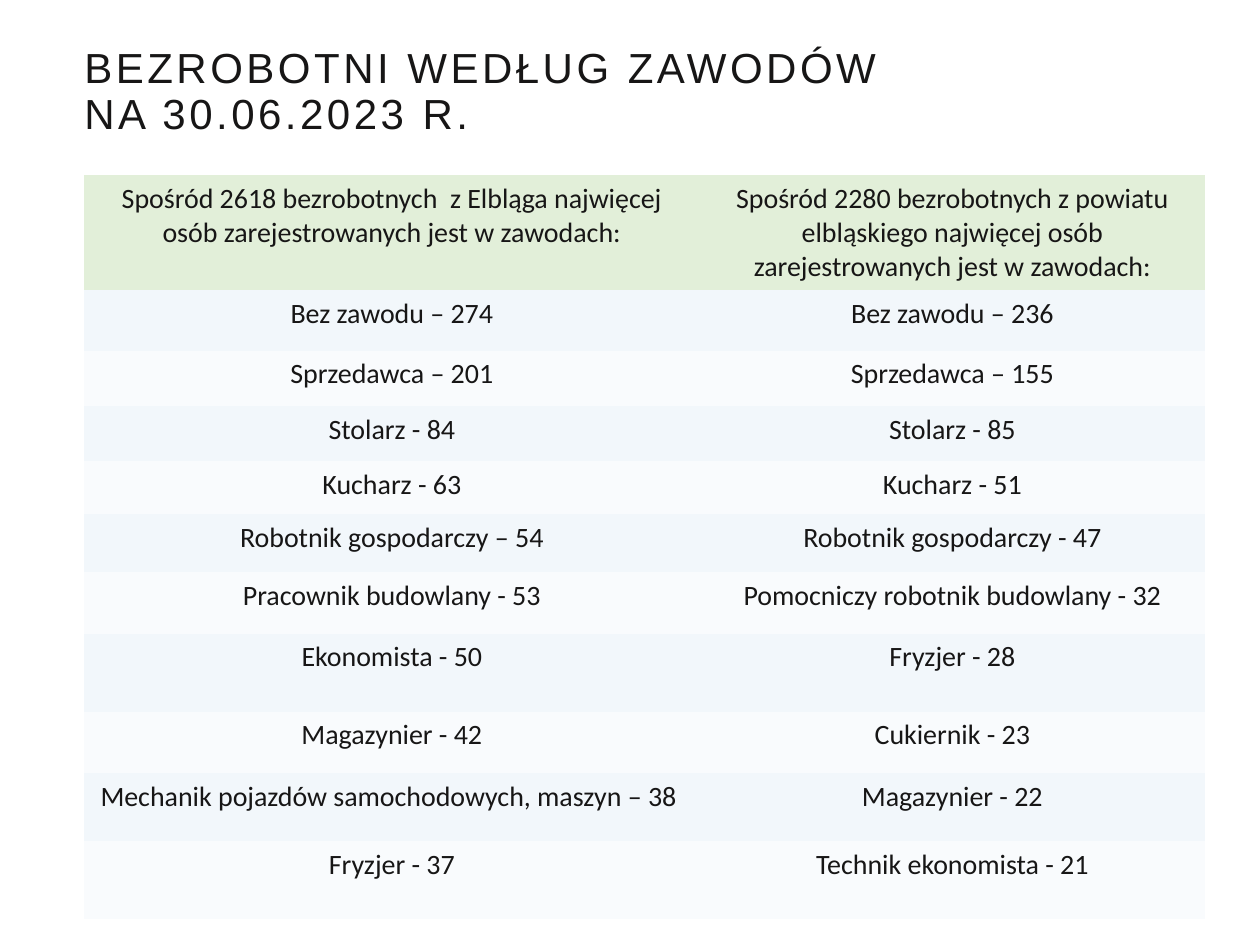
from pptx import Presentation
from pptx.dml.color import RGBColor
from pptx.enum.text import MSO_ANCHOR, MSO_AUTO_SIZE, PP_ALIGN
from pptx.oxml.ns import qn
from pptx.util import Cm, Pt

COLOURS = {"text": "171616", "header": "E2EFD9", "odd": "F2F7FB", "even": "F9FBFD"}
NO_STYLE_NO_GRID = "{2D5ABB26-0587-4C30-8999-92F81FD0307C}"

TITLE_LINES = ["BEZROBOTNI WEDŁUG ZAWODÓW ", "NA 30.06.2023 R."]
ROWS = [  # height in cm, city of Elbląg, Elbląg county
    (2.26, "Spośród 2618 bezrobotnych  z Elbląga najwięcej osób zarejestrowanych jest w zawodach:",
     "Spośród 2280 bezrobotnych z powiatu elbląskiego najwięcej osób zarejestrowanych jest w zawodach:"),
    (1.22, "Bez zawodu – 274", "Bez zawodu – 236"),
    (1.11, "Sprzedawca – 201", "Sprzedawca – 155"),
    (1.11, "Stolarz - 84", "Stolarz - 85"),
    (1.07, "Kucharz - 63", "Kucharz - 51"),
    (1.17, "Robotnik gospodarczy – 54", "Robotnik gospodarczy - 47"),
    (1.24, "Pracownik budowlany - 53", "Pomocniczy robotnik budowlany - 32"),
    (1.57, "Ekonomista - 50", "Fryzjer - 28"),
    (1.24, "Magazynier - 42", "Cukiernik - 23"),
    (1.37, "Mechanik pojazdów samochodowych, maszyn – 38 ", "Magazynier - 22"),
    (1.57, "Fryzjer - 37", "Technik ekonomista - 21"),
]
COLUMN_WIDTHS = [12.4, 10.2]


def add_span(para, text, font_name, size):
    span = para.add_run()
    span.text = text
    span.font.name = font_name
    span.font.size = Pt(size)
    span.font.color.rgb = RGBColor.from_string(COLOURS["text"])
    return span


def fill_title(box):
    box.left, box.top, box.width, box.height = Cm(0.71), Cm(0.41), Cm(24), Cm(2.92)
    frame = box.text_frame
    frame.auto_size = MSO_AUTO_SIZE.NONE
    frame.word_wrap = True
    frame.vertical_anchor = MSO_ANCHOR.MIDDLE
    frame.margin_left = frame.margin_right = Cm(0.5)
    frame.margin_top = frame.margin_bottom = Cm(0.5)
    para = frame.paragraphs[0]
    para.alignment = PP_ALIGN.LEFT
    para.line_spacing = 0.9
    properties = para._p.get_or_add_pPr()
    properties.set("marL", str(Cm(0.49)))
    properties.set("indent", "0")
    for number, line in enumerate(TITLE_LINES):
        if number:
            para.add_line_break()
        span = add_span(para, line, "Arial", 24)
        span.font._element.set("spc", "200")


def add_occupations(page):
    height = sum(row[0] for row in ROWS)
    table = page.shapes.add_table(len(ROWS), len(COLUMN_WIDTHS), Cm(1.7), Cm(3.53),
                                  Cm(sum(COLUMN_WIDTHS)), Cm(height)).table
    table.horz_banding = False
    table.first_row = False
    table._tbl.tblPr.find(qn("a:tableStyleId")).text = NO_STYLE_NO_GRID
    for column, width in zip(table.columns, COLUMN_WIDTHS):
        column.width = Cm(width)
    for number, (row_height, *texts) in enumerate(ROWS):
        table.rows[number].height = Cm(row_height)
        shade = "header" if number == 0 else "odd" if number % 2 else "even"
        for cell, text in zip(table.rows[number].cells, texts):
            cell.fill.solid()
            cell.fill.fore_color.rgb = RGBColor.from_string(COLOURS[shade])
            para = cell.text_frame.paragraphs[0]
            para.alignment = PP_ALIGN.CENTER
            add_span(para, text, "Calibri", 16)


def main():
    deck = Presentation()
    deck.slide_width, deck.slide_height = Cm(25.4), Cm(19.05)
    page = deck.slides.add_slide(deck.slide_layouts.get_by_name("Title Only"))
    fill_title(page.shapes.title)
    add_occupations(page)
    deck.save("out.pptx")


if __name__ == "__main__":
    main()
